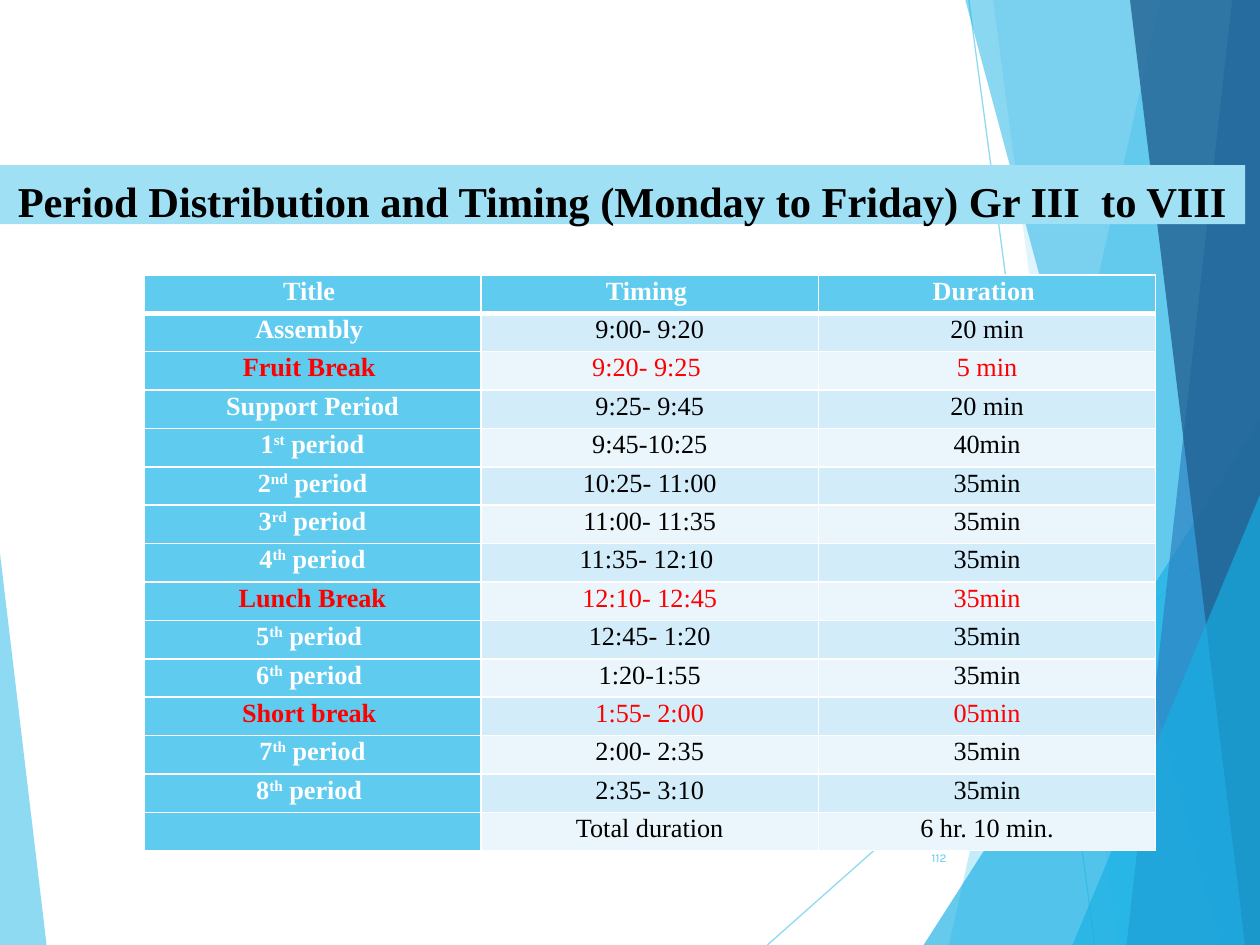
from dataclasses import dataclass

import pptx
import pptx.dml.color
import pptx.enum.dml
import pptx.enum.shapes
import pptx.enum.text
import pptx.oxml.ns
import pptx.util
from lxml import etree

Cm = pptx.util.Cm
Pt = pptx.util.Pt
RGBColor = pptx.dml.color.RGBColor
Align = pptx.enum.text.PP_ALIGN
Anchor = pptx.enum.text.MSO_ANCHOR
ShapeType = pptx.enum.shapes.MSO_SHAPE
qn = pptx.oxml.ns.qn

WHITE = RGBColor(0xFF, 0xFF, 0xFF)
BLACK = RGBColor(0x00, 0x00, 0x00)
RED = RGBColor(0xFF, 0x00, 0x00)
SKY = RGBColor(0x5F, 0xCB, 0xEF)
CYAN = RGBColor(0x17, 0xB0, 0xE4)
BLUE = RGBColor(0x2E, 0x83, 0xC3)
NAVY = RGBColor(0x22, 0x62, 0x92)
TITLE_BAND = RGBColor(0x9F, 0xE0, 0xF5)
DARK_ROW = RGBColor(0xD2, 0xEC, 0xF9)
LIGHT_ROW = RGBColor(0xEA, 0xF6, 0xFC)

SLIDE_WIDTH, SLIDE_HEIGHT = 25.4, 19.05
SERIF = "Times New Roman"


@dataclass
class Ribbon:
    """Band from a slanted left edge to the right side of the slide."""
    top_x: float
    bottom_x: float
    color: RGBColor
    opacity: int


@dataclass
class Triangle:
    left: float
    top: float
    width: float
    apex: float
    color: RGBColor
    opacity: int


@dataclass
class Ray:
    start: tuple[float, float]
    end: tuple[float, float]


@dataclass
class Period:
    title: str  # "^" encloses a superscript
    timing: str
    duration: str
    is_break: bool = False


DECORATION = [
    Ray((19.53, 0), (22.07, SLIDE_HEIGHT)),
    Ray((SLIDE_WIDTH, 10.24), (15.47, SLIDE_HEIGHT)),
    Ribbon(23.39, 19.13, SKY, 36),
    Ribbon(20.02, 22.53, SKY, 20),
    Triangle(18.62, 8.46, 6.78, 1, CYAN, 66),
    Ribbon(19.46, 24.59, CYAN, 50),
    Ribbon(24.84, 22.71, BLUE, 70),
    Ribbon(22.78, 25.1, NAVY, 80),
    Triangle(21.62, 9.98, 3.78, 1, CYAN, 66),
    Triangle(0, 11.15, 0.94, 0, SKY, 70),
]

PERIODS = [
    Period("Title ", "Timing ", "Duration "),
    Period("Assembly ", "9:00- 9:20", "20 min"),
    Period("Fruit Break ", "9:20- 9:25 ", "5 min", True),
    Period("Support Period", "9:25- 9:45", "20 min"),
    Period("1^st^ period", "9:45-10:25", "40min"),
    Period("2^nd^ period", "10:25- 11:00", "35min"),
    Period("3^rd^ period", "11:00- 11:35", "35min"),
    Period("4^th^ period", "11:35- 12:10 ", "35min"),
    Period("Lunch Break", "12:10- 12:45", "35min", True),
    Period("5^th^ period ", "12:45- 1:20", "35min"),
    Period("6^th^ period ", "1:20-1:55", "35min"),
    Period("Short break ", "1:55- 2:00", "05min", True),
    Period("7^th^ period", "2:00- 2:35", "35min"),
    Period("8^th^ period ", "2:35- 3:10", "35min"),
    Period("", "Total duration", "6 hr. 10 min."),
]


def write_text(frame, text: str, *, size: float, color: RGBColor, font: str = SERIF,
               bold: bool = False, align=Align.CENTER, spacing: float = 1.0) -> None:
    paragraph = frame.paragraphs[0]
    paragraph.alignment = align
    paragraph.line_spacing = spacing
    for index, part in enumerate(text.split("^")):
        run = paragraph.add_run()
        run.text = part
        run.font.name = font
        run.font.size = Pt(size)
        run.font.bold = bold
        run.font.color.rgb = color
        if index % 2:
            run.font._element.set("baseline", "30000")


def set_opacity(shape, percent: int) -> None:
    for color in shape.element.spPr.iter(qn("a:srgbClr")):
        etree.SubElement(color, qn("a:alpha"), val=str(percent * 1000))


def paint(shape, color: RGBColor, opacity: int = 100) -> None:
    shape.shadow.inherit = False
    shape.fill.solid()
    shape.fill.fore_color.rgb = color
    shape.line.fill.background()
    if opacity < 100:
        set_opacity(shape, opacity)


def draw_ray(slide, ray: Ray) -> None:
    connector = slide.shapes.add_connector(
        pptx.enum.shapes.MSO_CONNECTOR.STRAIGHT,
        *(Cm(value) for value in ray.start + ray.end))
    connector.line.color.rgb = SKY
    connector.line.width = Pt(0.75)
    set_opacity(connector, 70)
    etree.SubElement(connector.element.spPr, qn("a:effectLst"))


def draw_ribbon(slide, ribbon: Ribbon) -> None:
    builder = slide.shapes.build_freeform(Cm(ribbon.top_x), 0)
    corners = [(SLIDE_WIDTH, 0), (SLIDE_WIDTH, SLIDE_HEIGHT), (ribbon.bottom_x, SLIDE_HEIGHT)]
    builder.add_line_segments([(Cm(x), Cm(y)) for x, y in corners], close=True)
    paint(builder.convert_to_shape(), ribbon.color, ribbon.opacity)


def draw_triangle(slide, triangle: Triangle) -> None:
    shape = slide.shapes.add_shape(
        ShapeType.ISOSCELES_TRIANGLE, Cm(triangle.left), Cm(triangle.top),
        Cm(triangle.width), Cm(SLIDE_HEIGHT - triangle.top))
    shape.adjustments[0] = triangle.apex
    paint(shape, triangle.color, triangle.opacity)


def set_borders(cell, top: float, bottom: float) -> None:
    properties = cell._tc.get_or_add_tcPr()
    widths = {"a:lnL": 1, "a:lnR": 1, "a:lnT": top, "a:lnB": bottom}
    for position, (tag, width) in enumerate(widths.items()):
        line = etree.Element(qn(tag), w=str(Pt(width)))
        fill = etree.SubElement(line, qn("a:solidFill"))
        etree.SubElement(fill, qn("a:srgbClr"), val=str(WHITE))
        properties.insert(position, line)


def draw_timetable(slide, periods: list[Period]) -> None:
    table = slide.shapes.add_table(len(periods), 3, Cm(2.9), Cm(5.54),
                                   Cm(20.4), Cm(11.61)).table
    for row, period in enumerate(periods):
        band = DARK_ROW if row % 2 else LIGHT_ROW
        for column, text in enumerate((period.title, period.timing, period.duration)):
            cell = table.cell(row, column)
            is_heading = row == 0 or column == 0
            cell.margin_left = cell.margin_right = Cm(0.15)
            cell.margin_top = cell.margin_bottom = 0
            cell.fill.solid()
            cell.fill.fore_color.rgb = SKY if is_heading else band
            set_borders(cell, top=3 if row == 1 else 1, bottom=3 if row == 0 else 1)
            plain = WHITE if is_heading else BLACK
            write_text(cell.text_frame, text, size=15, bold=is_heading, spacing=1.07,
                       color=RED if period.is_break else plain)


def main() -> None:
    presentation = pptx.Presentation()
    presentation.slide_width = Cm(SLIDE_WIDTH)
    presentation.slide_height = Cm(SLIDE_HEIGHT)
    slide = presentation.slides.add_slide(presentation.slide_layouts[6])

    # Background facets
    painters = {Ray: draw_ray, Ribbon: draw_ribbon, Triangle: draw_triangle}
    for item in DECORATION:
        painters[type(item)](slide, item)

    # Title band
    title = slide.shapes.add_shape(ShapeType.RECTANGLE, 0, Cm(3.33), Cm(25.1), Cm(1.19))
    paint(title, TITLE_BAND)
    title.text_frame.word_wrap = True
    title.text_frame.vertical_anchor = Anchor.TOP
    title.text_frame.margin_top = Cm(0.2)
    write_text(title.text_frame,
               "Period Distribution and Timing (Monday to Friday) Gr III  to VIII",
               size=24.3, color=BLACK, bold=True)

    # Timetable
    draw_timetable(slide, PERIODS)

    # Slide number
    number = slide.shapes.add_textbox(Cm(17.91), Cm(16.79), Cm(1.42), Cm(1.02))
    number.text_frame.word_wrap = True
    number.text_frame.vertical_anchor = Anchor.MIDDLE
    write_text(number.text_frame, "112", size=6.8, color=SKY, font="Karla", align=Align.RIGHT)

    presentation.save("out.pptx")


if __name__ == "__main__":
    main()
